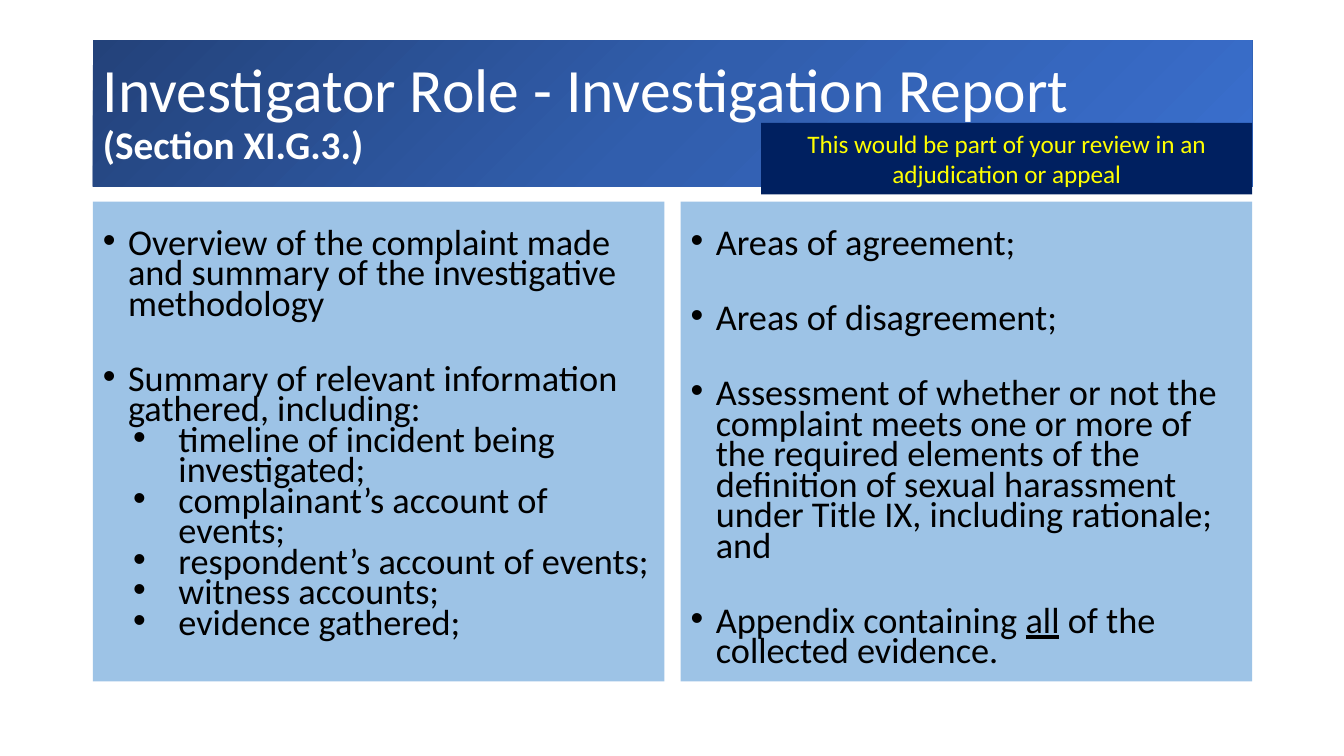
from copy import deepcopy
from dataclasses import dataclass

from lxml.etree import SubElement
from pptx import Presentation
from pptx.dml.color import RGBColor as Color
from pptx.enum.shapes import MSO_SHAPE as ShapeKind
from pptx.enum.text import MSO_ANCHOR as Anchor
from pptx.enum.text import MSO_AUTO_SIZE as AutoSize
from pptx.enum.text import PP_ALIGN as Align
from pptx.oxml.ns import qn
from pptx.util import Emu, Inches, Pt


@dataclass(frozen=True)
class Theme:
    font: str = "Calibri"
    title_size: float = 44
    section_size: float = 28
    body_size: float = 25.9
    note_size: float = 18
    title_color: str = "FFFFFF"
    body_color: str = "000000"
    note_color: str = "FFFF00"
    panel_fill: str = "9DC3E6"
    note_fill: str = "002060"
    banner_stops: tuple = ((0, "23427A"), (0.5, "315EAD"), (1, "3A6FCE"))


@dataclass(frozen=True)
class Grid:
    """Two equal columns between side margins, in inches."""
    left: float = 0.92
    width: float = 11.5
    gutter: float = 0.16
    banner_row: tuple = (0.4, 1.45)
    note_row: tuple = (1.22, 0.71)
    body_row: tuple = (2, 4.76)
    note_width: float = 4.87

    @property
    def column_width(self) -> float:
        return (self.width - self.gutter) / 2

    def column_left(self, index: int) -> float:
        return self.left + index * (self.column_width + self.gutter)


@dataclass(frozen=True)
class Item:
    """A bullet; every second piece of its text is underlined."""
    texts: tuple
    level: int = 0
    space_before: float = 32


THEME = Theme()
GRID = Grid()

REPORT_CONTENTS = (
    (
        Item(("Overview of the complaint made and summary of the investigative methodology",), space_before=0),
        Item(("Summary of relevant information gathered, including:",)),
        *(
            Item((detail,), level=1, space_before=0)
            for detail in (
                "timeline of incident being investigated;",
                "complainant’s account of events;",
                "respondent’s account of events;",
                "witness accounts;",
                "evidence gathered;",
            )
        ),
    ),
    (
        Item(("Areas of agreement;",), space_before=0),
        Item(("Areas of disagreement;",)),
        Item((
            "Assessment of whether or not the complaint meets one or more of the required elements "
            "of the definition of sexual harassment under Title IX, including rationale; and",
        )),
        Item(("Appendix containing ", "all", " of the collected evidence.")),
    ),
)


def place(shape, left: float, row: tuple, width: float) -> None:
    top, height = row
    shape.left, shape.top = Inches(left), Inches(top)
    shape.width, shape.height = Inches(width), Inches(height)


def fill_solid(shape, color: str) -> None:
    shape.fill.solid()
    shape.fill.fore_color.rgb = Color.from_string(color)


def fill_gradient(shape, stops: tuple) -> None:
    shape.fill.gradient()
    shape.fill.gradient_angle = 315
    stop_list = shape._element.spPr.find(qn("a:gradFill")).find(qn("a:gsLst"))
    stop_list.append(deepcopy(stop_list[-1]))
    for stop, (position, color) in zip(shape.fill.gradient_stops, stops):
        stop.position = position
        stop.color.rgb = Color.from_string(color)


def set_font(font, size: float, color: str) -> None:
    font.name = THEME.font
    font.size = Pt(size)
    font.color.rgb = Color.from_string(color)


def add_bullet(paragraph, level: int) -> None:
    margin, hanging = ((0.25, 0.25), (0.75, 0.45))[level]
    properties = paragraph._p.get_or_add_pPr()
    properties.set("marL", str(Inches(margin)))
    properties.set("indent", str(-Inches(hanging)))
    color = SubElement(properties, qn("a:buClr"))
    SubElement(color, qn("a:srgbClr"), val=THEME.body_color)
    SubElement(properties, qn("a:buFont"), typeface="Arial")
    SubElement(properties, qn("a:buChar"), char="•")


def write_title(title) -> None:
    place(title, GRID.left, GRID.banner_row, GRID.width)
    fill_gradient(title, THEME.banner_stops)
    frame = title.text_frame
    frame.auto_size = AutoSize.NONE
    frame.vertical_anchor = Anchor.MIDDLE
    paragraph = frame.paragraphs[0]
    paragraph.alignment = Align.LEFT
    paragraph.line_spacing = 0.9
    heading = paragraph.add_run()
    heading.text = "Investigator Role - Investigation Report "
    set_font(heading.font, THEME.title_size, THEME.title_color)
    paragraph.add_line_break()
    section = paragraph.add_run()
    section.text = "(Section XI.G.3.)"
    set_font(section.font, THEME.section_size, THEME.title_color)
    section.font.bold = True


def write_panel(panel, column: int, items: tuple) -> None:
    place(panel, GRID.column_left(column), GRID.body_row, GRID.column_width)
    fill_solid(panel, THEME.panel_fill)
    frame = panel.text_frame
    frame.auto_size = AutoSize.NONE
    frame.vertical_anchor = Anchor.TOP
    frame.margin_top = Inches(0.29)
    for index, item in enumerate(items):
        paragraph = frame.add_paragraph() if index else frame.paragraphs[0]
        paragraph.level = item.level
        paragraph.line_spacing = 0.7
        paragraph.space_before = Pt(item.space_before)
        add_bullet(paragraph, item.level)
        set_font(paragraph.font, THEME.body_size, THEME.body_color)
        for position, text in enumerate(item.texts):
            run = paragraph.add_run()
            run.text = text
            if position % 2:
                run.font.underline = True


def add_note(slide) -> None:
    note = slide.shapes.add_shape(ShapeKind.RECTANGLE, Emu(0), Emu(0), Emu(0), Emu(0))
    place(note, GRID.left + GRID.width - GRID.note_width, GRID.note_row, GRID.note_width)
    note.shadow.inherit = False
    fill_solid(note, THEME.note_fill)
    note.line.fill.background()
    frame = note.text_frame
    frame.word_wrap = True
    frame.vertical_anchor = Anchor.TOP
    paragraph = frame.paragraphs[0]
    paragraph.text = "This would be part of your review in an adjudication or appeal"
    paragraph.alignment = Align.CENTER
    set_font(paragraph.font, THEME.note_size, THEME.note_color)


def main() -> None:
    presentation = Presentation()
    presentation.slide_width, presentation.slide_height = Inches(13.33), Inches(7.5)
    two_content = presentation.slide_layouts[3]
    slide = presentation.slides.add_slide(two_content)

    # Banner
    write_title(slide.shapes.title)

    # Report contents, one panel per column
    for column, items in enumerate(REPORT_CONTENTS):
        write_panel(slide.placeholders[column + 1], column, items)

    # Reviewer's note over the banner
    add_note(slide)

    presentation.save("out.pptx")


if __name__ == "__main__":
    main()
